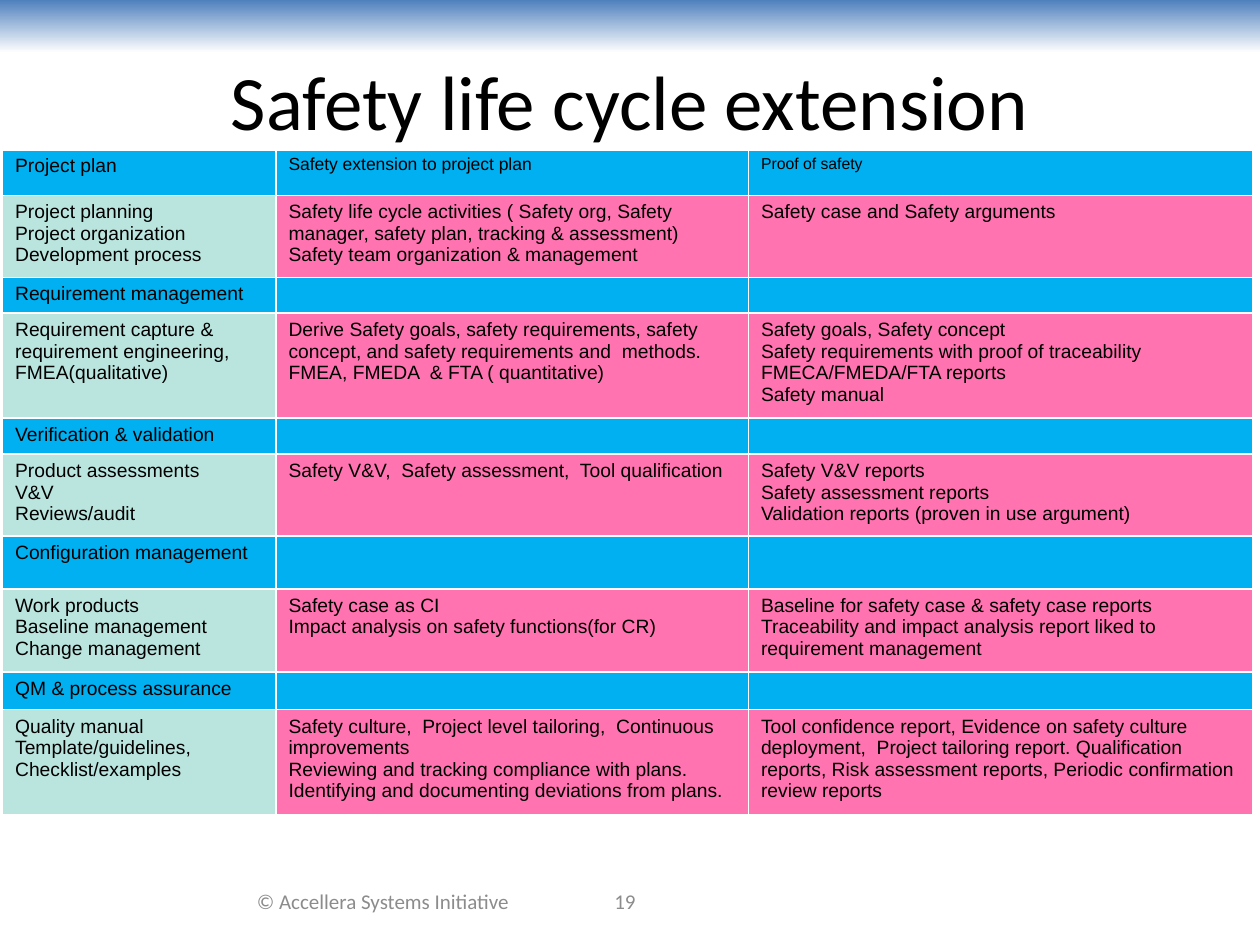
from lxml import etree
from pptx import Presentation, util as u
from pptx.dml.color import RGBColor
from pptx.enum import shapes, text
from pptx.oxml import ns

BLACK = RGBColor(0x00, 0x00, 0x00)
WHITE = RGBColor(0xFF, 0xFF, 0xFF)
GRAY = RGBColor(0x8C, 0x8C, 0x8C)
BAND_BLUE = RGBColor(0x4F, 0x81, 0xBD)
HEADING_BLUE = RGBColor(0x00, 0xB0, 0xF0)
MINT = RGBColor(0xBA, 0xE4, 0xDE)
PINK = RGBColor(0xFF, 0x73, 0xB0)

COLUMN_WIDTHS = [2.17, 3.75, 4]
# Row height in inches, then the three cell texts
ROWS = [
    (0.37, "Project plan", "Safety extension to project plan", "Proof of safety"),
    (0.63, "Project planning\nProject organization\nDevelopment process",
     "Safety life cycle activities ( Safety org, Safety manager, safety plan, "
     "tracking & assessment)\nSafety team organization & management",
     "Safety case and Safety arguments"),
    (0.28, "Requirement management", "", ""),
    (0.81, "Requirement capture & requirement engineering, FMEA(qualitative)",
     "Derive Safety goals, safety requirements, safety concept, and safety "
     "requirements and  methods. FMEA, FMEDA  & FTA ( quantitative)",
     "Safety goals, Safety concept\nSafety requirements with proof of traceability\n"
     "FMECA/FMEDA/FTA reports\nSafety manual"),
    (0.28, "Verification & validation", "", ""),
    (0.64, "Product assessments\nV&V\nReviews/audit",
     "Safety V&V,  Safety assessment,  Tool qualification",
     "Safety V&V reports\nSafety assessment reports\n"
     "Validation reports (proven in use argument)"),
    (0.42, "Configuration management", "", ""),
    (0.66, "Work products\nBaseline management\nChange management",
     "Safety case as CI\nImpact analysis on safety functions(for CR)",
     "Baseline for safety case & safety case reports\n"
     "Traceability and impact analysis report liked to requirement management"),
    (0.3, "QM & process assurance", "", ""),
    (0.83, "Quality manual\nTemplate/guidelines,\nChecklist/examples",
     "Safety culture,  Project level tailoring,  Continuous improvements\n"
     "Reviewing and tracking compliance with plans.\n"
     "Identifying and documenting deviations from plans.",
     "Tool confidence report, Evidence on safety culture deployment,  Project "
     "tailoring report. Qualification reports, Risk assessment reports, "
     "Periodic confirmation review reports"),
]
HEADER_SIZES = [11, 10, 9]
BODY_SIZE = 11


def format_text(text_frame, font_name, size, color, alignment=None):
    for paragraph in text_frame.paragraphs:
        paragraph.alignment = alignment
        for run in paragraph.runs:
            run.font.name = font_name
            run.font.size = u.Pt(size)
            run.font.color.rgb = color
        if not paragraph.runs:
            # An empty cell takes its line height from the paragraph end mark
            etree.SubElement(paragraph._p, ns.qn("a:endParaRPr"), sz=str(size * 100))


def add_borders(cell, widths):
    """Draw white cell borders; widths maps L, R, T and B to points."""
    properties = cell._tc.get_or_add_tcPr()
    for side, width in widths.items():
        line = etree.SubElement(properties, ns.qn(f"a:ln{side}"), w=str(u.Pt(width)))
        fill = etree.SubElement(line, ns.qn("a:solidFill"))
        etree.SubElement(fill, ns.qn("a:srgbClr"), val=str(WHITE))


presentation = Presentation()
presentation.slide_width = u.Inches(10)
presentation.slide_height = u.Inches(7.5)
slide = presentation.slides.add_slide(presentation.slide_layouts[5])

# Gradient band along the top edge
band = slide.shapes.add_shape(
    shapes.MSO_SHAPE.RECTANGLE, 0, 0, presentation.slide_width, u.Inches(0.42))
band.shadow.inherit = False
band.line.fill.background()
band.fill.gradient()
band.fill.gradient_angle = 270
for stop, color in zip(band.fill.gradient_stops, (BAND_BLUE, WHITE)):
    stop.color.rgb = color

# Title
title = slide.shapes.title
title.left, title.top = u.Inches(0.5), u.Inches(0.17)
title.width, title.height = u.Inches(9), u.Inches(1.25)
title.text_frame.text = "Safety life cycle extension"
title.text_frame.vertical_anchor = text.MSO_ANCHOR.MIDDLE
format_text(title.text_frame, "Calibri", 44, BLACK, text.PP_ALIGN.CENTER)

# Footer
for left, width, wording in ((1.83, 2.42, "© Accellera Systems Initiative"), (4, 1.92, "19")):
    footer = slide.shapes.add_textbox(
        u.Inches(left), u.Inches(6.95), u.Inches(width), u.Inches(0.4))
    footer.text_frame.word_wrap = True
    footer.text_frame.vertical_anchor = text.MSO_ANCHOR.MIDDLE
    footer.text_frame.text = wording
    format_text(footer.text_frame, "Calibri", 12, GRAY, text.PP_ALIGN.CENTER)

# Table: blue heading rows alternate with detail rows
table = slide.shapes.add_table(
    len(ROWS), len(COLUMN_WIDTHS), u.Inches(0.02), u.Inches(1.18),
    u.Inches(sum(COLUMN_WIDTHS)), u.Inches(sum(row[0] for row in ROWS))).table
for column, width in zip(table.columns, COLUMN_WIDTHS):
    column.width = u.Inches(width)
for row_index, (height, *wordings) in enumerate(ROWS):
    table.rows[row_index].height = u.Inches(height)
    is_heading = row_index % 2 == 0
    for column_index, wording in enumerate(wordings):
        cell = table.cell(row_index, column_index)
        cell.text_frame.text = wording
        size = HEADER_SIZES[column_index] if row_index == 0 else BODY_SIZE
        format_text(cell.text_frame, "Arial", size, BLACK)
        for run in (r for p in cell.text_frame.paragraphs for r in p.runs):
            run.font.bold = False
        add_borders(cell, {"L": 1, "R": 1, "T": 3 if row_index == 0 else 1, "B": 1})
        cell.fill.solid()
        detail_color = MINT if column_index == 0 else PINK
        cell.fill.fore_color.rgb = HEADING_BLUE if is_heading else detail_color

presentation.save("out.pptx")
